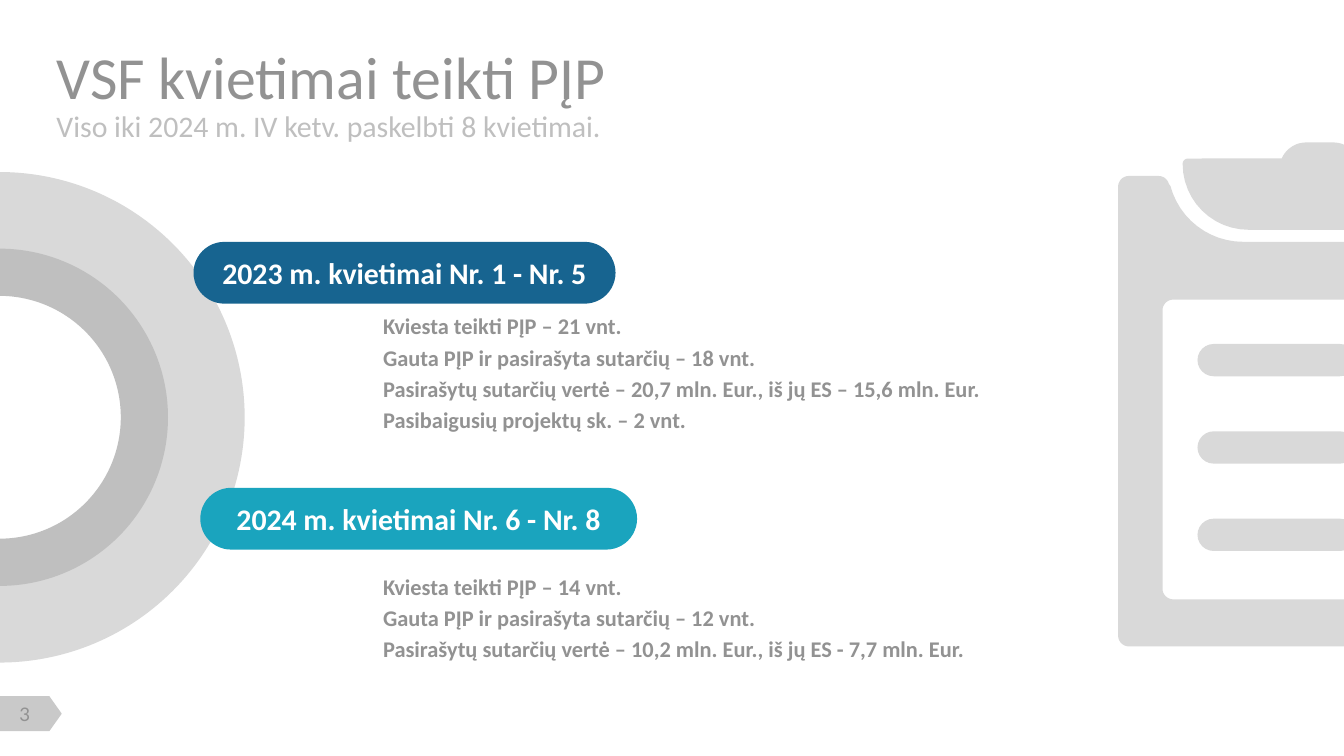
import math
from dataclasses import dataclass

import pptx
import pptx.dml.color
import pptx.enum.shapes
import pptx.enum.text
import pptx.util

Inches = pptx.util.Inches
RGBColor = pptx.dml.color.RGBColor
SHAPE = pptx.enum.shapes.MSO_SHAPE
ALIGN = pptx.enum.text.PP_ALIGN
MIDDLE = pptx.enum.text.MSO_ANCHOR.MIDDLE

WHITE = RGBColor(0xFF, 0xFF, 0xFF)
GREY = RGBColor(0x92, 0x92, 0x92)
MID_GREY = RGBColor(0xBF, 0xBF, 0xBF)
LIGHT_GREY = RGBColor(0xD9, 0xD9, 0xD9)
TAG_GREY = RGBColor(0xC9, 0xC9, 0xC9)
BLUE = RGBColor(0x17, 0x64, 0x90)
TEAL = RGBColor(0x1A, 0xA4, 0xBE)

Box = tuple[float, float, float, float]
Point = tuple[float, float]


@dataclass
class Style:
    size: float
    color: RGBColor
    bold: bool = False
    font: str = "Calibri"
    align: ALIGN = ALIGN.LEFT


@dataclass
class Call:
    heading: str
    pill: Box
    color: RGBColor
    body: Box
    lines: list[str]


TITLE = Style(32, GREY)
SUBTITLE = Style(16, MID_GREY)
HEADING = Style(16, WHITE, bold=True, align=ALIGN.CENTER)
BODY = Style(12, GREY, bold=True)
NUMBER = Style(10, GREY, font="Lato", align=ALIGN.CENTER)

CALLS = [
    Call("2023 m. kvietimai Nr. 1 - Nr. 5", (1.44, 1.8, 3.14, 0.46), BLUE,
         (2.85, 2.31, 4.49, 0.93),
         ["Kviesta teikti PĮP – 21 vnt.",
          "Gauta PĮP ir pasirašyta sutarčių – 18 vnt.",
          "Pasirašytų sutarčių vertė – 20,7 mln. Eur., iš jų ES – 15,6 mln. Eur.",
          "Pasibaigusių projektų sk. – 2 vnt."]),
    Call("2024 m. kvietimai Nr. 6 - Nr. 8", (1.49, 3.63, 3.25, 0.46), TEAL,
         (2.85, 4.25, 4.49, 0.69),
         ["Kviesta teikti PĮP – 14 vnt.",
          "Gauta PĮP ir pasirašyta sutarčių – 12 vnt.",
          "Pasirašytų sutarčių vertė – 10,2 mln. Eur., iš jų ES - 7,7 mln. Eur."]),
]


def paint(sp, color: RGBColor) -> None:
    sp.shadow.inherit = False
    sp.fill.solid()
    sp.fill.fore_color.rgb = color
    sp.line.fill.background()


def add_shape(s, kind: SHAPE, box: Box, color: RGBColor,
              adjustments: tuple = (), rotation: float = 0):
    sp = s.shapes.add_shape(kind, *map(Inches, box))
    paint(sp, color)
    sp.rotation = rotation
    for i, value in enumerate(adjustments):
        sp.adjustments[i] = value
    return sp


def write(tf, lines: list[str], style: Style) -> None:
    tf.vertical_anchor = MIDDLE
    for i, line in enumerate(lines):
        p = tf.paragraphs[0] if i == 0 else tf.add_paragraph()
        p.alignment = style.align
        if i:
            p.space_before = pptx.util.Pt(style.size * 0.2)
        r = p.add_run()
        r.text = line
        r.font.color.rgb = style.color
        values = {"name": style.font, "size": pptx.util.Pt(style.size), "bold": style.bold}
        for name, value in values.items():
            setattr(r.font, name, value)


def add_text(s, box: Box, lines: list[str], style: Style, wrap: bool = True,
             insets: Box = (0, 0, 0, 0)) -> None:
    tf = s.shapes.add_textbox(*map(Inches, box)).text_frame
    tf.word_wrap = wrap
    for side, inset in zip(("left", "top", "right", "bottom"), insets):
        setattr(tf, f"margin_{side}", Inches(inset))
    write(tf, lines, style)


def arc(cx: float, cy: float, radius: float, start: int, end: int) -> list[Point]:
    """Points on a circle; angles run clockwise from the right."""
    steps = 12
    angles = [math.radians(start + (end - start) * i / steps) for i in range(steps + 1)]
    return [(cx + radius * math.cos(a), cy + radius * math.sin(a)) for a in angles]


def add_outline(s, contours: list[list[Point]], color: RGBColor) -> None:
    scaled = [[(Inches(x), Inches(y)) for x, y in points] for points in contours]
    builder = s.shapes.build_freeform(*scaled[0][0], scale=1.0)
    for i, points in enumerate(scaled):
        if i:
            builder.move_to(*points[0])
        builder.add_line_segments(points[1:], close=True)
    paint(builder.convert_to_shape(), color)


def add_clipboard(s) -> None:
    # Clip
    clip = (arc(9.92, 1.26, 0.2, 270, 336) + arc(10.8, 1.22, 0.04, 270, 360)
            + arc(10.35, 1.22, 0.49, 0, 90) + arc(9.29, 1.22, 0.49, 90, 180)
            + arc(8.84, 1.22, 0.04, 180, 270) + arc(9.72, 1.26, 0.2, 204, 270))
    add_outline(s, [clip], LIGHT_GREY)

    # Written lines
    for i in range(3):
        add_shape(s, SHAPE.ROUNDED_RECTANGLE, (8.91, 2.56 + 0.65 * i, 1.18, 0.24),
                  LIGHT_GREY, (0.5,))

    # Board with a window cut out
    corner = 0.08
    board = (arc(8.4, 1.39, corner, 180, 270) + arc(8.62, 1.39, corner, 270, 345)
             + arc(9.25, 1.24, 0.56, 165, 90) + arc(10.39, 1.24, 0.56, 90, 15)
             + arc(11.02, 1.39, corner, 195, 270) + arc(11.24, 1.39, corner, 270, 360)
             + arc(11.24, 4.73, corner, 0, 90) + arc(8.4, 4.73, corner, 90, 180))
    window = (arc(8.73, 2.31, corner, 270, 180) + arc(8.73, 4.38, corner, 180, 90)
              + arc(10.91, 4.38, corner, 90, 0) + arc(10.91, 2.31, corner, 360, 270))
    add_outline(s, [board, window], LIGHT_GREY)


def main() -> None:
    # Widescreen slide, 16:9
    prs = pptx.Presentation()
    prs.slide_width = Inches(10)
    prs.slide_height = prs.slide_width * 9 // 16
    s = prs.slides.add_slide(prs.slide_layouts[6])

    # Page number tag
    add_shape(s, SHAPE.FLOWCHART_OFFPAGE_CONNECTOR, (0.1, 5.08, 0.26, 0.46),
              TAG_GREY, rotation=270)
    add_text(s, (0.02, 5.23, 0.33, 0.17), ["3"], NUMBER)

    # Title and subtitle
    add_text(s, (0.42, 0.84, 9.15, 0.19),
             ["Viso iki 2024 m. IV ketv. paskelbti 8 kvietimai."], SUBTITLE, wrap=False)
    add_text(s, (0.42, 0.37, 9.15, 0.39), ["VSF kvietimai teikti PĮP"], TITLE,
             insets=(0, 0.05, 0.1, 0.05))

    # Half rings on the left edge
    add_shape(s, SHAPE.BLOCK_ARC, (-1.83, 1.28, 3.65, 3.65), LIGHT_GREY,
              (108, 0, 0.25), 90)
    add_shape(s, SHAPE.BLOCK_ARC, (-1.26, 1.85, 2.51, 2.51), MID_GREY,
              (108, 0, 0.14), 90)

    add_clipboard(s)

    # Calls by year
    for call in CALLS:
        pill = add_shape(s, SHAPE.ROUNDED_RECTANGLE, call.pill, call.color, (0.5,))
        write(pill.text_frame, [call.heading], HEADING)
        add_text(s, call.body, call.lines, BODY)

    prs.save("out.pptx")


if __name__ == "__main__":
    main()
